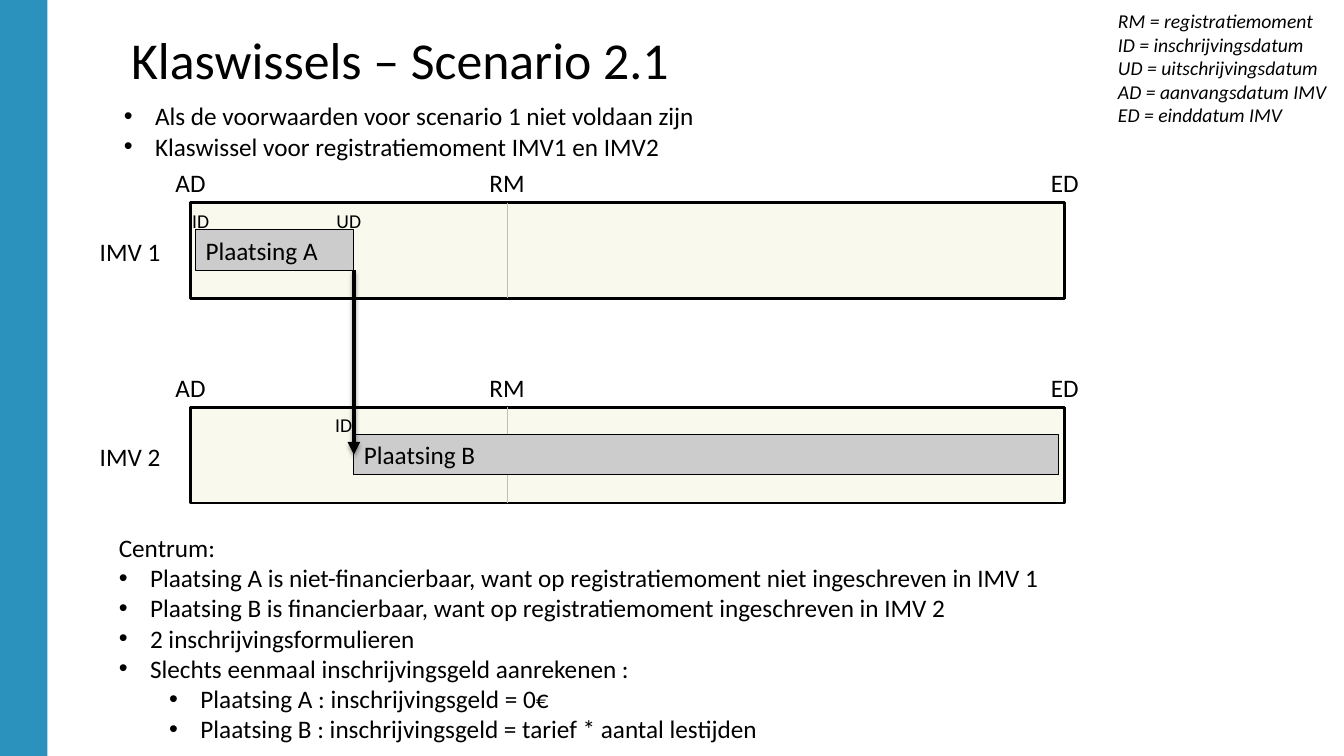
from lxml import etree
from pptx import Presentation
from pptx import util as u
from pptx.dml.color import RGBColor
from pptx.enum import shapes, text
from pptx.oxml import ns

# Content
TITLE = "Klaswissels – Scenario 2.1"
LEGEND = ["RM = registratiemoment", "ID = inschrijvingsdatum", "UD = uitschrijvingsdatum",
          "AD = aanvangsdatum IMV", "ED = einddatum IMV"]
# Paragraphs as (bullet depth, words); depth 0 has no bullet
CONDITIONS = [(1, "Als de voorwaarden voor scenario 1 niet voldaan zijn"),
              (1, "Klaswissel voor registratiemoment IMV1 en IMV2")]
CONSEQUENCES = [
    (0, "Centrum:"),
    (1, "Plaatsing A is niet-financierbaar, want op registratiemoment niet ingeschreven in IMV 1"),
    (1, "Plaatsing B is financierbaar, want op registratiemoment ingeschreven in IMV 2"),
    (1, "2 inschrijvingsformulieren"),
    (1, "Slechts eenmaal inschrijvingsgeld aanrekenen :"),
    (2, "Plaatsing A : inschrijvingsgeld = 0€"),
    (2, "Plaatsing B : inschrijvingsgeld = tarief * aantal lestijden"),
]
COLORS = {"band": "2B92BE", "lane": "F9F9EE", "bar": "CCCCCC", "moment": "C0C0B0",
          "ink": "000000"}
FONT = "Calibri"

# Timeline geometry in inches
WIDTH, HEIGHT = 13.33, 7.5
START, MOMENT, END = 1.89, 5.03, 10.56
SWITCH = 3.51
LANE_HEIGHT, BAR_HEIGHT, BAR_DROP = 0.95, 0.4, 0.27
DATES = [("AD", START), ("RM", MOMENT), ("ED", END)]
# Lane: name, top, bar name, bar left, bar right, small marks as (label, centre)
LANES = [
    ("IMV 1", 2.01, "Plaatsing A", 1.94, SWITCH, [("ID", 1.99), ("UD", 3.46)]),
    ("IMV 2", 4.04, "Plaatsing B", SWITCH, 10.5, [("ID", 3.41)]),
]

presentation = Presentation()
presentation.slide_width, presentation.slide_height = u.Inches(WIDTH), u.Inches(HEIGHT)
slide = presentation.slides.add_slide(presentation.slide_layouts[5])


def color(name):
    return RGBColor.from_string(COLORS[name])


def inches(*lengths):
    return [u.Inches(length) for length in lengths]


def style(paragraph, size, italic=False):
    paragraph.font.name, paragraph.font.size = FONT, u.Pt(size)
    paragraph.font.italic = italic
    paragraph.font.color.rgb = color("ink")


def add_bullet(paragraph, depth):
    paragraph.level = depth - 1
    properties = paragraph._p.get_or_add_pPr()
    properties.set("marL", str(u.Inches(0.31 + 0.5 * (depth - 1))))
    properties.set("indent", str(u.Inches(-0.31)))
    etree.SubElement(properties, ns.qn("a:buFont"), typeface="Arial")
    etree.SubElement(properties, ns.qn("a:buChar"), char="•")


def add_text(box, paragraphs, size=18, italic=False, wrap=True):
    left, top, width, height = box
    frame = slide.shapes.add_textbox(*inches(left, top, width, height)).text_frame
    frame.word_wrap = wrap
    for index, (depth, words) in enumerate(paragraphs):
        paragraph = frame.add_paragraph() if index else frame.paragraphs[0]
        paragraph.text = words
        style(paragraph, size, italic)
        if depth:
            add_bullet(paragraph, depth)
    return frame


def add_label(words, centre, top, size=18):
    frame = add_text((centre - 0.4, top, 0.8, 0.4), [(0, words)], size, wrap=False)
    frame.paragraphs[0].alignment = text.PP_ALIGN.CENTER


def add_rectangle(box, fill, line_width=0):
    shape = slide.shapes.add_shape(shapes.MSO_SHAPE.RECTANGLE, *inches(*box))
    shape.shadow.inherit = False
    shape.fill.solid()
    shape.fill.fore_color.rgb = color(fill)
    if line_width:
        shape.line.color.rgb = color("ink")
        shape.line.width = u.Pt(line_width)
    else:
        shape.line.fill.background()
    return shape


def add_vertical(x, top, bottom, ink, width):
    line = slide.shapes.add_connector(shapes.MSO_CONNECTOR.STRAIGHT, *inches(x, top, x, bottom))
    line.line.color.rgb = color(ink)
    line.line.width = u.Pt(width)
    effects = etree.SubElement(line._element.spPr, ns.qn("a:effectLst"))
    return line, effects


# Side band and title
add_rectangle((0, 0, 0.47, HEIGHT), "band")
title = slide.shapes.title
title.left, title.top, title.width, title.height = inches(1.2, 0.16, 9.7, 0.85)
title.text_frame.text = TITLE
title.text_frame.vertical_anchor = text.MSO_ANCHOR.MIDDLE
title.text_frame.paragraphs[0].alignment = text.PP_ALIGN.LEFT
style(title.text_frame.paragraphs[0], 37)

# Text blocks
add_text((1.13, 0.95, 7.09, 0.71), CONDITIONS)
add_text((10.99, 0.04, WIDTH - 10.99, 1.28), [(0, words) for words in LEGEND],
         size=14, italic=True, wrap=False)
add_text((1.08, 5.23, 9.65, 2.25), CONSEQUENCES)

# Timelines
for name, top, bar_name, bar_left, bar_right, marks in LANES:
    add_rectangle((START, top, END - START, LANE_HEIGHT), "lane", 2)
    add_vertical(MOMENT, top, top + LANE_HEIGHT, "moment", 0.75)
    add_label(name, 1.29, top + 0.29)
    for date, x in DATES:
        add_label(date, x, top - 0.4)
    bar = add_rectangle((bar_left, top + BAR_DROP, bar_right - bar_left, BAR_HEIGHT), "bar", 0.75)
    bar.text_frame.text = bar_name
    bar.text_frame.paragraphs[0].alignment = text.PP_ALIGN.LEFT
    style(bar.text_frame.paragraphs[0], 18)
    for mark, x in marks:
        add_label(mark, x, top + 0.01, 14)

# Arrow from placement A to placement B, with a soft shadow
bar_tops = [lane[1] + BAR_DROP for lane in LANES]
arrow, effects = add_vertical(SWITCH, bar_tops[0] + BAR_HEIGHT, bar_tops[1] + BAR_HEIGHT / 2,
                              "ink", 3)
etree.SubElement(arrow.line._get_or_add_ln(), ns.qn("a:tailEnd"), type="triangle")
shadow = etree.SubElement(effects, ns.qn("a:outerShdw"), blurRad=str(u.Pt(3.1)),
                          dist=str(u.Pt(1.8)), dir="5400000", rotWithShape="0")
shade = etree.SubElement(shadow, ns.qn("a:srgbClr"), val=COLORS["ink"])
etree.SubElement(shade, ns.qn("a:alpha"), val="35000")

presentation.save("out.pptx")
